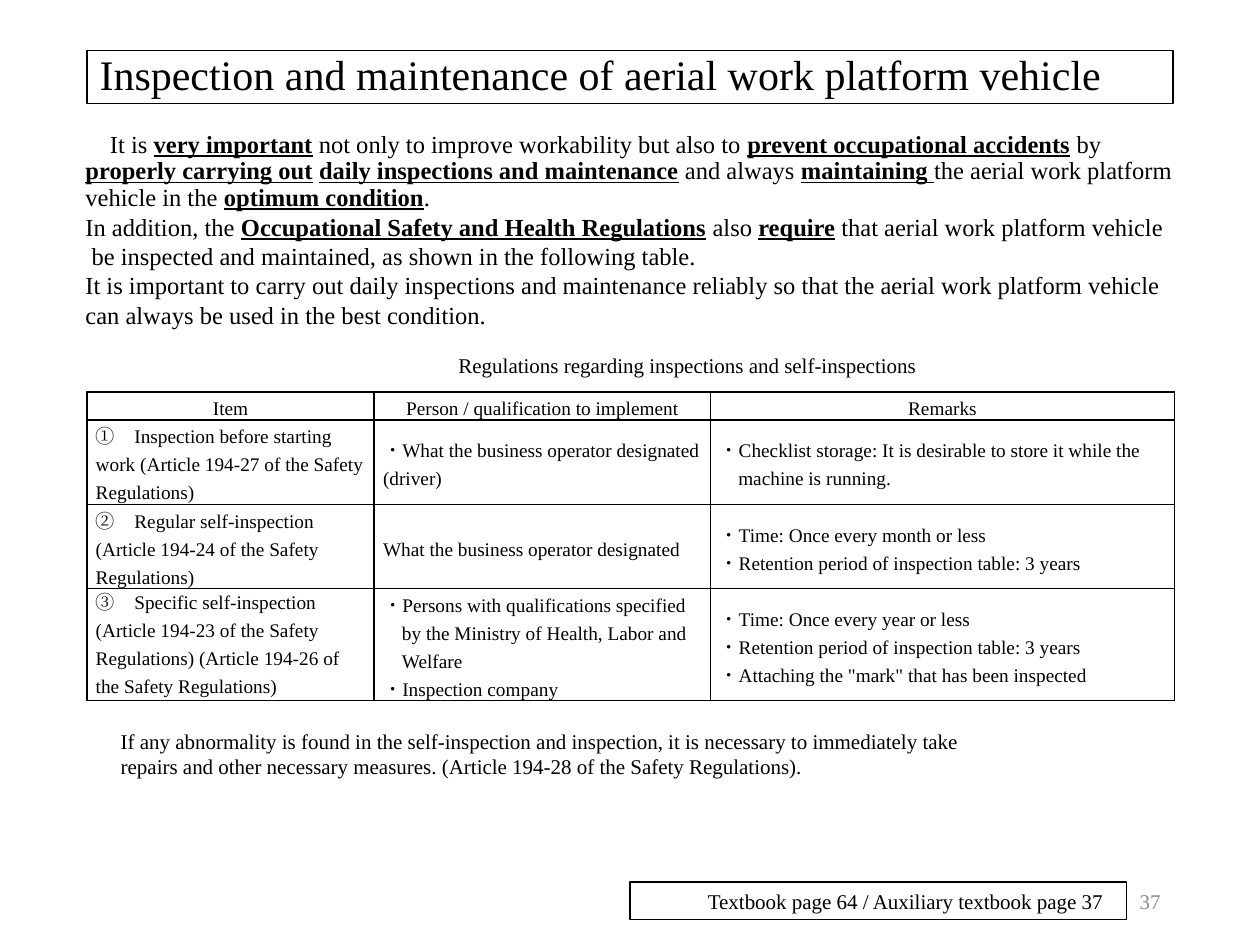
"""Build the slide on inspection and maintenance of aerial work platform vehicles."""
from lxml import etree
from pptx import Presentation
from pptx import util as u
from pptx.dml.color import RGBColor
from pptx.enum import shapes, text
from pptx.oxml.ns import qn

TITLE = "Inspection and maintenance of aerial work platform vehicle"
BODY = [
    "\u3000It is *very important* not only to improve workability but also to "
    "*prevent occupational accidents* by *properly carrying out* "
    "*daily inspections and maintenance* and always *maintaining *the aerial "
    "work platform vehicle in the *optimum condition*.\u00a0",
    "In addition, the *Occupational Safety and Health Regulations* also *require* "
    "that aerial work platform vehicle \u00a0be inspected and maintained, "
    "as shown in the following table.",
    "It is important to carry out daily inspections and maintenance reliably so that "
    "the aerial work platform vehicle can always be used in the best condition.",
]
CAPTION = ["Regulations regarding inspections and self-inspections"]
TABLE = [
    [["Item"], ["Person / qualification to implement"], ["Remarks"]],
    [["①\u3000Inspection before starting work (Article 194-27 of the Safety Regulations)"],
     ["・What the business operator designated (driver)"],
     ["・Checklist storage: It is desirable to store it while the machine is running."]],
    [["②\u3000Regular self-inspection (Article 194-24 of the Safety Regulations)"],
     ["What the business operator designated"],
     ["・Time: Once every month or less",
      "・Retention period of inspection table: 3 years"]],
    [["③\u3000Specific self-inspection\u00a0",
      "(Article 194-23 of the Safety Regulations) (Article 194-26 of the Safety Regulations)"],
     ["・Persons with qualifications specified by the Ministry of Health, Labor and Welfare",
      "・Inspection company"],
     ["・Time: Once every year or less",
      "・Retention period of inspection table: 3 years",
      '・Attaching the "mark" that has been inspected']],
]
HANGING = {(1, 2), (3, 1)}
COLS = [2.28, 2.67, 3.68]
ROWS = [0.22, 0.67, 0.67, 0.89]
NOTE = [
    "If any abnormality is found in the self-inspection and inspection, "
    "it is necessary to immediately take",
    "repairs and other necessary measures. (Article 194-28 of the Safety Regulations).",
]
REFERENCE = ["Textbook page 64 / Auxiliary textbook page 37\u00a0\u00a0"]
PAGE = ["37"]
THEME = {"font": "Times New Roman", "ink": "000000", "muted": "8C8C8C",
         "title": 24, "body": 14, "small": 12, "cell": 11, "leading": u.Pt(16)}
LEFT = 0.69
ALIGN = text.PP_ALIGN
MIDDLE = text.MSO_ANCHOR.MIDDLE


def write(tf, lines, size, color="ink", align=ALIGN.LEFT, spacing=None,
          margin=0, indent=0, anchor=None, wrap=True):
    """Fill a text frame; asterisks enclose bold underlined words."""
    tf.word_wrap = wrap
    if anchor is not None:
        tf.vertical_anchor = anchor
    for i, line in enumerate(lines):
        p = tf.add_paragraph() if i else tf.paragraphs[0]
        p.alignment = align
        if spacing is not None:
            p.line_spacing = spacing
        pPr = p._p.get_or_add_pPr()
        pPr.set("marL", str(u.Inches(margin)))
        pPr.set("indent", str(u.Inches(indent)))
        for n, part in enumerate(line.split("*")):
            if not part:
                continue
            r = p.add_run()
            r.text = part
            r.font.name = THEME["font"]
            r.font.size = u.Pt(THEME[size])
            r.font.color.rgb = RGBColor.from_string(THEME[color])
            if n % 2:
                r.font.bold = r.font.underline = True
            etree.SubElement(r._r.get_or_add_rPr(), qn("a:ea"), typeface=THEME["font"])


def box(s, at, lines, size, **fmt):
    """Add a text box."""
    sp = s.shapes.add_textbox(*map(u.Inches, at))
    write(sp.text_frame, lines, size, **fmt)
    return sp


def outline(sp):
    """Give a shape a thin line."""
    sp.line.color.rgb = RGBColor.from_string(THEME["ink"])
    sp.line.width = u.Pt(0.75)


def borders(cell):
    """Draw all four cell borders."""
    tcPr = cell._tc.get_or_add_tcPr()
    for i, side in enumerate(("lnL", "lnR", "lnT", "lnB")):
        ln = etree.Element(qn("a:" + side), w=str(u.Pt(1)))
        fill = etree.SubElement(ln, qn("a:solidFill"))
        etree.SubElement(fill, qn("a:srgbClr"), val=THEME["ink"])
        tcPr.insert(i, ln)


def add_regulations(s):
    """Add the table of regulations."""
    frame = s.shapes.add_table(len(ROWS), len(COLS), u.Inches(LEFT), u.Inches(3.11),
                               u.Inches(sum(COLS)), u.Inches(sum(ROWS)))
    table = frame.table
    table.first_row = table.horz_banding = False
    for column, width in zip(table.columns, COLS):
        column.width = u.Inches(width)
    for row, height in zip(table.rows, ROWS):
        row.height = u.Inches(height)
    for i, row in enumerate(TABLE):
        for j, lines in enumerate(row):
            cell = table.cell(i, j)
            cell.margin_left = cell.margin_right = u.Inches(0.07)
            cell.margin_top = cell.margin_bottom = 0
            cell.vertical_anchor = MIDDLE
            cell.fill.background()
            borders(cell)
            hang = 0.15 if (i, j) in HANGING else 0
            write(cell.text_frame, lines, "cell", spacing=THEME["leading"], wrap=None,
                  align=ALIGN.LEFT if i else ALIGN.CENTER, margin=hang, indent=-hang)
            if hang and len(lines) > 1:
                pPr = cell.text_frame.paragraphs[-1]._p.get_or_add_pPr()
                pPr.set("marL", "0")
                pPr.set("indent", "0")
    table.cell(3, 0).text_frame.paragraphs[0].line_spacing = None


def main():
    """Build and save the slide."""
    prs = Presentation()
    prs.slide_width, prs.slide_height = u.Inches(10), u.Inches(7.5)
    s = prs.slides.add_slide(prs.slide_layouts[5])

    title = s.shapes.title
    title.left, title.top, title.width, title.height = map(u.Inches, (LEFT, 0.4, 8.62, 0.42))
    outline(title)
    write(title.text_frame, [TITLE], "title", spacing=0.9, anchor=MIDDLE)

    ref = s.shapes.add_shape(shapes.MSO_SHAPE.RECTANGLE, *map(u.Inches, (5, 7, 3.94, 0.3)))
    ref.shadow.inherit = False
    ref.fill.background()
    outline(ref)
    write(ref.text_frame, REFERENCE, "small", align=ALIGN.RIGHT, anchor=text.MSO_ANCHOR.TOP)
    box(s, (7.06, 6.95, 2.25, 0.4), PAGE, "small", color="muted",
        align=ALIGN.RIGHT, anchor=MIDDLE)

    add_regulations(s)
    box(s, (3.37, 2.75, 4.05, 0.3), CAPTION, "small", indent=0.17, anchor=MIDDLE, wrap=False)
    box(s, (LEFT, 5.73, 8.5, 0.5), NOTE, "small", indent=0.17, anchor=MIDDLE)

    body = box(s, (0.58, 1, 8.84, 1.66), BODY, "body")
    first = body.text_frame.paragraphs[0]
    first.line_spacing, first.space_before = 0.9, u.Pt(10)
    prs.save("out.pptx")


if __name__ == "__main__":
    main()
